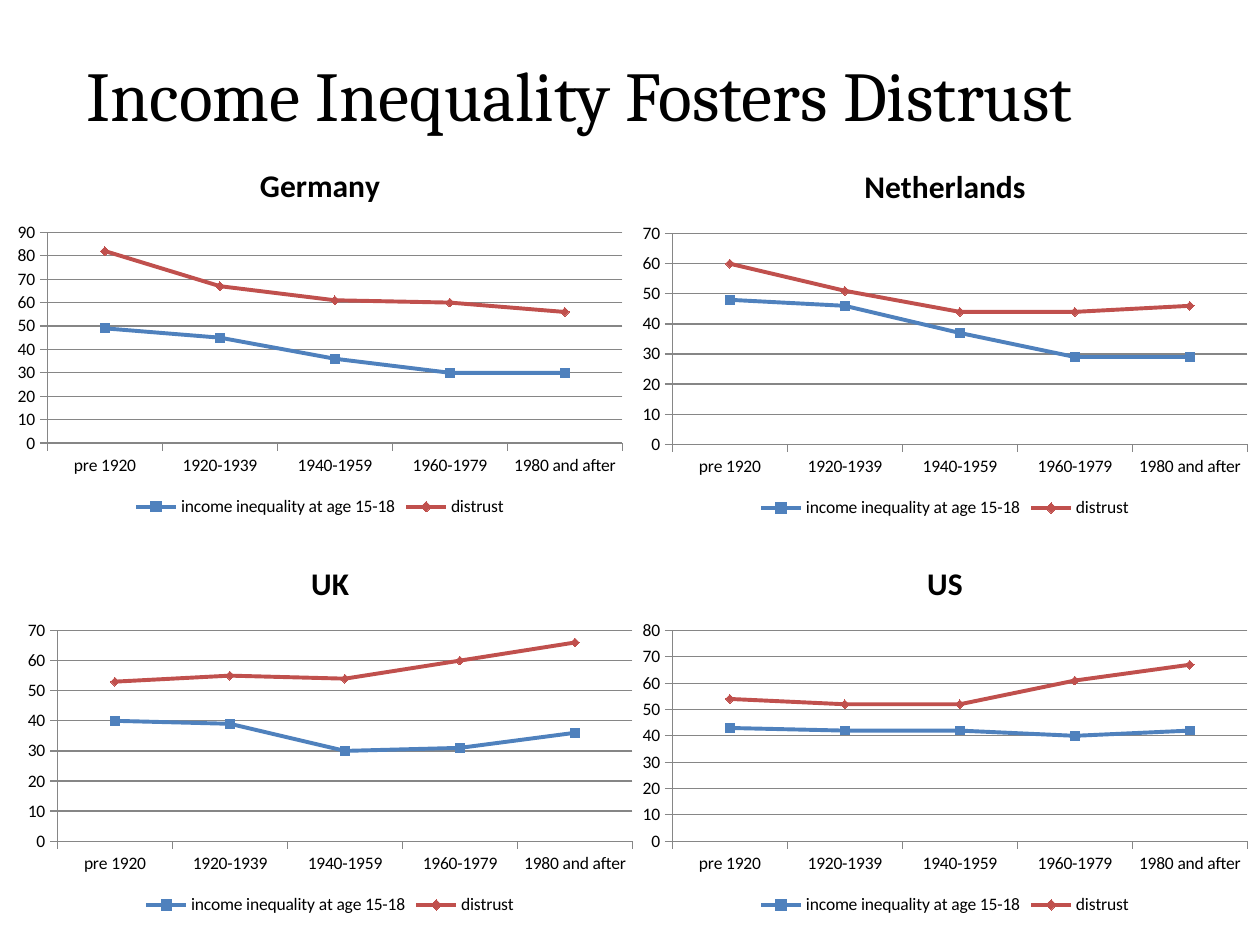
from pptx import Presentation
from pptx.chart.data import CategoryChartData
from pptx.dml.color import RGBColor
from pptx.enum.chart import XL_CHART_TYPE, XL_LEGEND_POSITION, XL_TICK_MARK
from pptx.enum.text import MSO_AUTO_SIZE
from pptx.util import Pt

LINE = XL_CHART_TYPE.LINE
BOTTOM = XL_LEGEND_POSITION.BOTTOM
OUT = XL_TICK_MARK.OUTSIDE
FIT = MSO_AUTO_SIZE.SHAPE_TO_FIT_TEXT

PX = 9144  # EMU per px, 100 px to the inch
COLORS = {"text": "000000", "grid": "868686",
          "income inequality at age 15-18": "4F81BD", "distrust": "C0504D"}
NAMES = ["income inequality at age 15-18", "distrust"]
TITLE = "Income Inequality Fosters Distrust"
COHORTS = ["pre 1920", "1920-1939", "1940-1959", "1960-1979", "1980 and after"]
SIZE = (500, 300)
# country, (left, top), inequality, distrust
CHARTS = [
    ("Germany", (4, 114), [49, 45, 36, 30, 30], [82, 67, 61, 60, 56]),
    ("Netherlands", (500, 115), [48, 46, 37, 29, 29], [60, 51, 44, 44, 46]),
    ("UK", (12, 430), [40, 39, 30, 31, 36], [53, 55, 54, 60, 66]),
    ("US", (500, 430), [43, 42, 42, 40, 42], [54, 52, 52, 61, 67]),
]


def emu(*px):
    return [n * PX for n in px]


def color(name):
    return RGBColor.from_string(COLORS[name])


def style(font, size, face, bold=False):
    font.size, font.name, font.bold = Pt(size), face, bold
    font.color.rgb = color("text")


def rule(line, name, width):
    line.color.rgb = color(name)
    line.width = Pt(width)


def add_trend(slide, country, spot, *rows):
    data = CategoryChartData()
    data.categories = COHORTS
    for name, row in zip(NAMES, rows):
        data.add_series(name, row)
    chart = slide.shapes.add_chart(LINE, *emu(*spot, *SIZE), data).chart
    style(chart.font, 10, "Calibri")

    chart.has_title = True
    head = chart.chart_title.text_frame
    head.text = country
    style(head.paragraphs[0].font, 18, "Calibri", True)
    chart.chart_title.include_in_layout = False

    chart.has_legend = True
    chart.legend.position = BOTTOM
    chart.legend.include_in_layout = False

    for axis in (chart.category_axis, chart.value_axis):
        axis.major_tick_mark = OUT
        rule(axis.format.line, "grid", 0.75)
    chart.value_axis.has_major_gridlines = True
    rule(chart.value_axis.major_gridlines.format.line, "grid", 0.75)

    chart.plots[0].vary_by_categories = False
    for series in chart.plots[0].series:
        series.smooth = False
        series.marker.style = None
        rule(series.format.line, series.name, 2.25)


def main():
    deck = Presentation()
    deck.slide_width, deck.slide_height = emu(1000, 750)
    slide = deck.slides.add_slide(deck.slide_layouts[6])

    frame = slide.shapes.add_textbox(*emu(59, 36, 856, 77)).text_frame
    frame.word_wrap = False
    frame.auto_size = FIT
    frame.text = TITLE
    style(frame.paragraphs[0].font, 40, "Cambria")

    for item in CHARTS:
        add_trend(slide, *item)
    deck.save("out.pptx")


if __name__ == "__main__":
    main()
